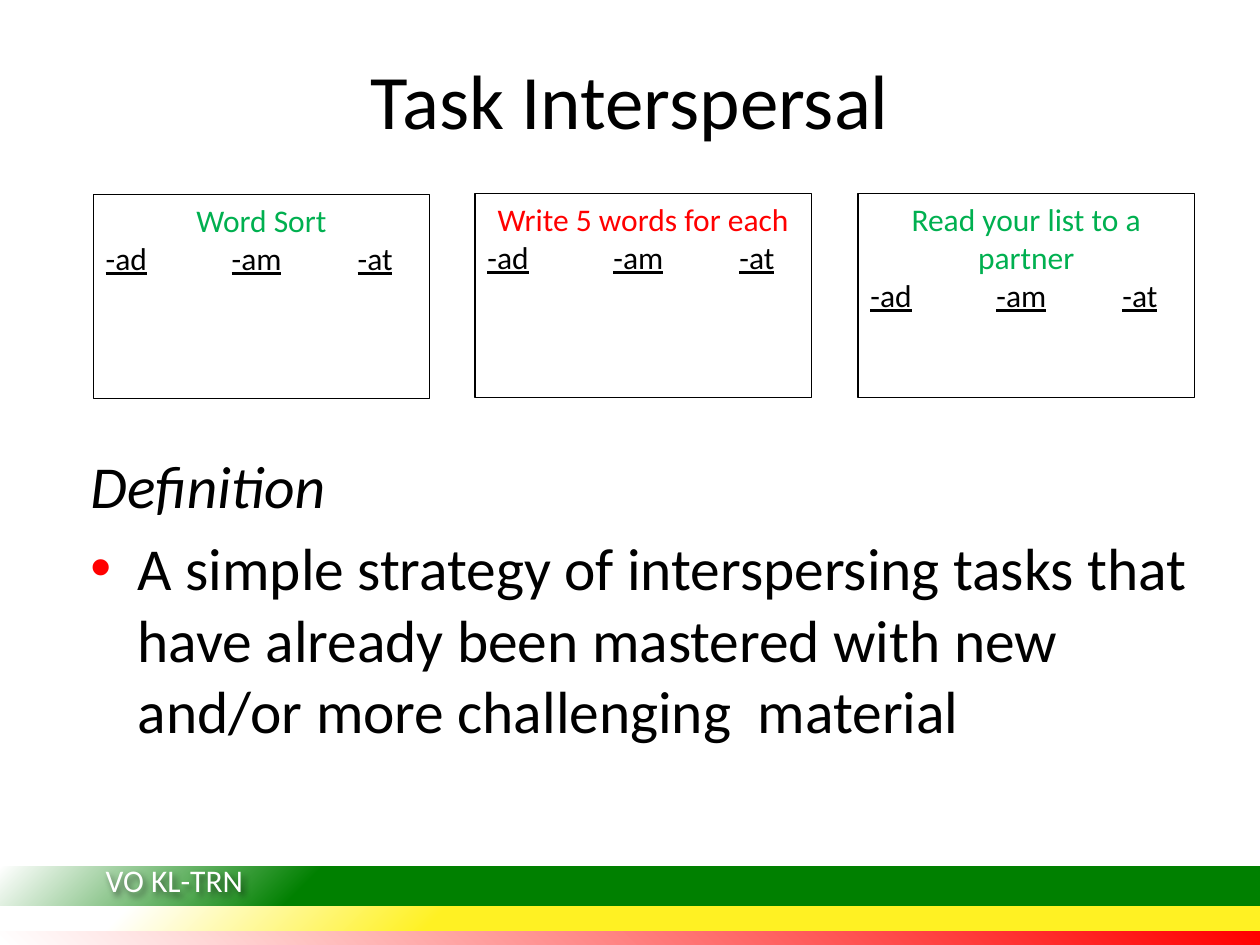
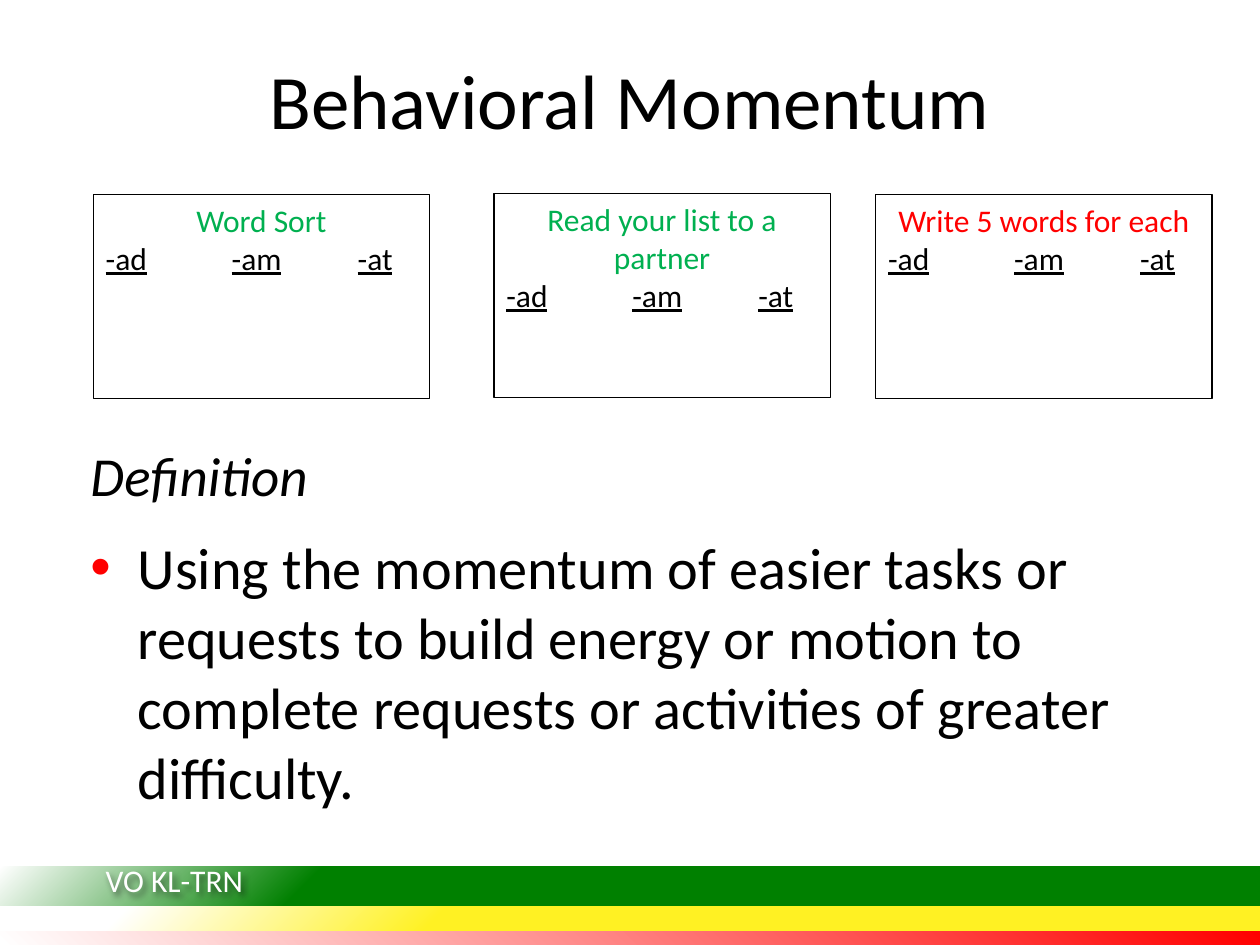
import pptx
import pptx.dml.color
import pptx.enum.shapes
import pptx.enum.text
import pptx.oxml
import pptx.oxml.ns
import pptx.util

NS = 'xmlns:a="http://schemas.openxmlformats.org/drawingml/2006/main"'
C = {"black": "000000", "white": "FFFFFF", "easy": "00B050", "hard": "FF0000",
     "green": "008000", "yellow": "FFF123", "red": "FF0000"}
FONT = "Calibri"
FOOTER = "VO KL-TRN"
RECT = pptx.enum.shapes.MSO_SHAPE.RECTANGLE
CENTER = pptx.enum.text.PP_ALIGN.CENTER
LEFT = pptx.enum.text.PP_ALIGN.LEFT

prs = pptx.Presentation()
prs.slide_width = pptx.util.Inches(10)
prs.slide_height = pptx.util.Inches(7.5)
W, H = prs.slide_width, prs.slide_height

BANDS = [
    ("red", 0.985, 0.015, 0, 100, 't="0" b="100000"'),
    ("green", 0.917, 0.042, 75, 100, 't="100000" b="0"'),
    ("yellow", 0.959, 0.026, 65, 90, 't="100000" b="0"'),
]
SORT = ("Word Sort", "easy")
WRITE = ("Write 5 words for each", "hard")
READ = ("Read your list to a partner", "easy")
SLIDES = [
    {"title": "Task Interspersal",
     "cards": [(0.074, 0.206, SORT), (0.377, 0.205, WRITE), (0.681, 0.205, READ)],
     "sizes": (34, 34), "leading": 1.0, "before": 0, "after": 6,
     "body": "A simple strategy of interspersing tasks that have already been "
             "mastered with new and/or more challenging  material"},
    {"title": "Behavioral Momentum",
     "cards": [(0.074, 0.206, SORT), (0.392, 0.205, READ), (0.695, 0.206, WRITE)],
     "sizes": (31.4, 33.3), "leading": 0.9, "before": 6.7, "after": 0,
     "body": "Using the momentum of easier tasks or requests to build energy or "
             "motion to complete requests or activities of greater difficulty."},
]


def place(x, y, w, h):
    return int(x * W), int(y * H), int(w * W), int(h * H)


def add_run(p, text, size, color="black"):
    r = p.add_run()
    r.text = text
    r.font.name = FONT
    r.font.size = pptx.util.Pt(size)
    r.font.color.rgb = pptx.dml.color.RGBColor.from_string(C[color])
    return r


for data in SLIDES:
    slide = prs.slides.add_slide(prs.slide_layouts[6])

    for color, y, h, solid, clear, focus in BANDS:
        sp = slide.shapes.add_shape(RECT, *place(0, y, 1, h))
        sp.shadow.inherit = False
        sp.line.fill.background()
        sp.fill.background()
        no_fill = sp._element.spPr.find(pptx.oxml.ns.qn("a:noFill"))
        sp._element.spPr.replace(no_fill, pptx.oxml.parse_xml(
            f'<a:gradFill {NS} rotWithShape="1"><a:gsLst>'
            f'<a:gs pos="{solid * 1000}"><a:srgbClr val="{C[color]}"/></a:gs>'
            f'<a:gs pos="{clear * 1000}"><a:srgbClr val="{C["white"]}"/></a:gs>'
            f'</a:gsLst><a:path path="circle"><a:fillToRect l="100000" r="0" {focus}/>'
            f'</a:path></a:gradFill>'))

    sp = slide.shapes.add_textbox(*place(0.074, 0.905, 0.192, 0.053))
    sp.text_frame.word_wrap = True
    add_run(sp.text_frame.paragraphs[0], FOOTER, 18, "white")
    sp._element.spPr.append(pptx.oxml.parse_xml(
        f'<a:effectLst {NS}><a:outerShdw blurRad="50800" dist="38100" dir="2700000">'
        f'<a:srgbClr val="{C["black"]}"><a:alpha val="50000"/></a:srgbClr>'
        f'</a:outerShdw></a:effectLst>'))

    sp = slide.shapes.add_textbox(*place(0.05, 0.029, 0.9, 0.15))
    tf = sp.text_frame
    tf.word_wrap = True
    tf.vertical_anchor = pptx.enum.text.MSO_ANCHOR.MIDDLE
    p = tf.paragraphs[0]
    p.alignment = CENTER
    add_run(p, data["title"], 44)

    for x, y, (task, color) in data["cards"]:
        sp = slide.shapes.add_shape(RECT, *place(x, y, 0.267, 0.216))
        sp.shadow.inherit = False
        sp.fill.background()
        sp.line.color.rgb = pptx.dml.color.RGBColor.from_string(C["black"])
        sp.line.width = pptx.util.Pt(0.75)
        tf = sp.text_frame
        tf.word_wrap = True
        tf.vertical_anchor = pptx.enum.text.MSO_ANCHOR.TOP
        p = tf.paragraphs[0]
        p.alignment = CENTER
        add_run(p, task, 18, color)
        p = tf.add_paragraph()
        p.alignment = LEFT
        stops = "".join(f'<a:tab pos="{int(n * 0.05 * W)}" algn="l"/>' for n in range(1, 5))
        p._p.get_or_add_pPr().append(pptx.oxml.parse_xml(f"<a:tabLst {NS}>{stops}</a:tabLst>"))
        add_run(p, "-ad\t\t-am\t\t-at", 18).font.underline = True

    head_size, body_size = data["sizes"]
    sp = slide.shapes.add_textbox(*place(0.062, 0.469, 0.9, 0.348))
    tf = sp.text_frame
    tf.word_wrap = True
    p = tf.paragraphs[0]
    p.line_spacing = data["leading"]
    p.space_after = pptx.util.Pt(6)
    add_run(p, "Definition", head_size).font.italic = True
    p = tf.add_paragraph()
    p.space_before = pptx.util.Pt(data["before"])
    p.space_after = pptx.util.Pt(data["after"])
    pPr = p._p.get_or_add_pPr()
    pPr.set("marL", str(int(0.0375 * W)))
    pPr.set("indent", str(int(-0.0375 * W)))
    for xml in (f'<a:buClr {NS}><a:srgbClr val="{C["red"]}"/></a:buClr>',
                f'<a:buFont {NS} typeface="Arial"/>',
                f'<a:buChar {NS} char="•"/>'):
        pPr.append(pptx.oxml.parse_xml(xml))
    add_run(p, data["body"], body_size)

prs.save("out.pptx")
